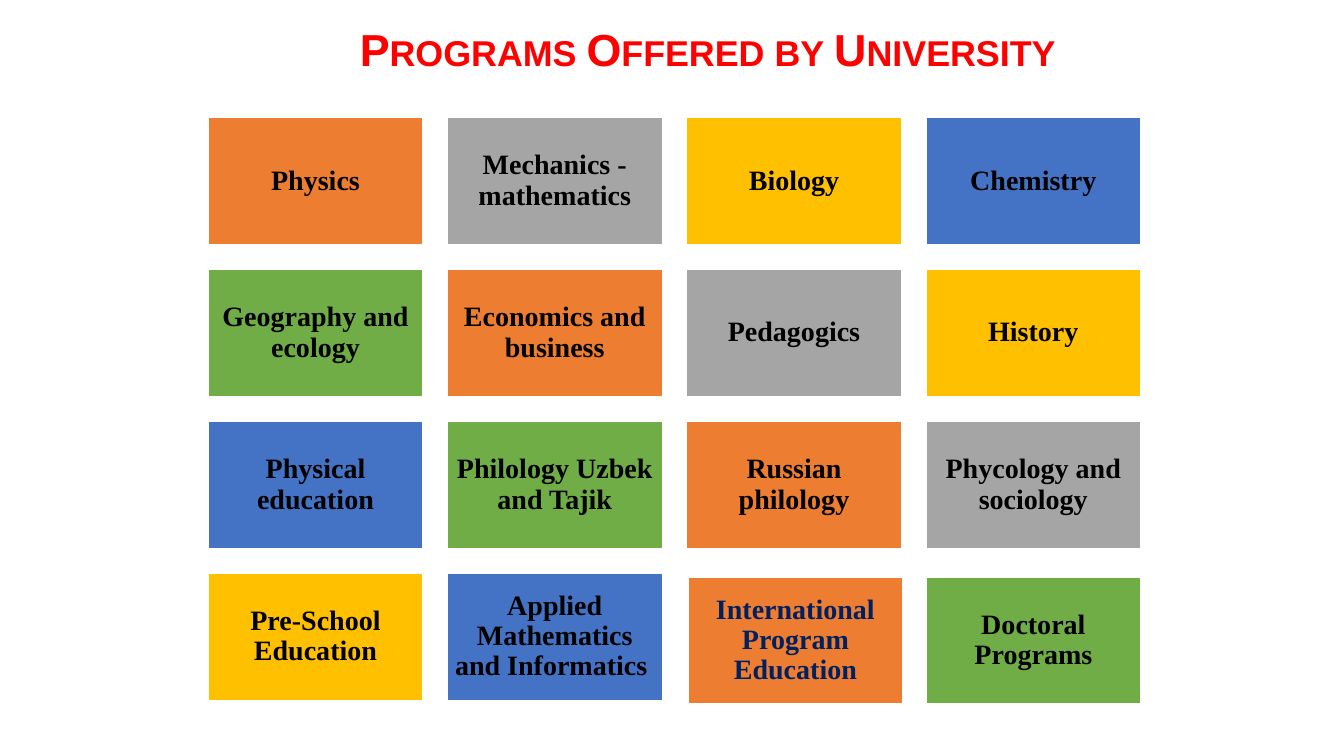
"""Build a slide with a grid of the programs offered by a university."""
from pptx import Presentation
from pptx.dml.color import RGBColor
from pptx.enum.shapes import MSO_SHAPE
from pptx.enum.text import MSO_ANCHOR, PP_ALIGN
from pptx.util import Inches, Pt


def color(hex_value):
    return RGBColor.from_string(hex_value)


def write_text(shape, text, font_name, size, hex_value, alignment, inset):
    frame = shape.text_frame
    frame.text = text
    frame.word_wrap = True
    frame.vertical_anchor = MSO_ANCHOR.MIDDLE
    frame.margin_left = frame.margin_right = Inches(inset)
    frame.margin_top = frame.margin_bottom = Inches(inset)
    paragraph = frame.paragraphs[0]
    paragraph.alignment = alignment
    paragraph.line_spacing = 0.9
    run = paragraph.runs[0]
    run.font.name = font_name
    run.font.size = Pt(size)
    run.font.bold = True
    run.font.color.rgb = color(hex_value)
    return run


presentation = Presentation()
presentation.slide_width = Inches(13.33)
presentation.slide_height = Inches(7.5)
slide = presentation.slides.add_slide(presentation.slide_layouts[6])

title = slide.shapes.add_textbox(Inches(2.52), Inches(0.18), Inches(8), Inches(0.68))
title_run = write_text(title, "Programs Offered by University", "Arial", 32,
                       "FF0000", PP_ALIGN.RIGHT, 0.05)
title_run.font._element.set("cap", "small")

FILLS = ["ED7D31", "A5A5A5", "FFC000", "4472C4", "70AD47"]
PROGRAMS = [
    "Physics", "Mechanics - mathematics", "Biology", "Chemistry",
    "Geography and ecology", "Economics and business", "Pedagogics", "History",
    "Physical education", "Philology Uzbek and Tajik", "Russian philology",
    "Phycology and sociology",
    "Pre-School Education", "Applied Mathematics and Informatics ",
]
COLUMNS = 4
LEFT, TOP = 2.05, 1.15
COLUMN_STEP, ROW_STEP = 2.373, 1.507

tiles = []
for index, program in enumerate(PROGRAMS):
    row, column = divmod(index, COLUMNS)
    tiles.append((program, LEFT + column * COLUMN_STEP, TOP + row * ROW_STEP, "000000"))
tiles.append(("Doctoral Programs", 9.17, 5.71, "000000"))
tiles.append(("International Program Education", 6.81, 5.71, "002060"))

for index, (program, left, top, text_color) in enumerate(tiles):
    tile = slide.shapes.add_shape(MSO_SHAPE.RECTANGLE, Inches(left), Inches(top),
                                  Inches(2.16), Inches(1.29))
    tile.shadow.inherit = False
    tile.fill.solid()
    tile.fill.fore_color.rgb = color(FILLS[index % len(FILLS)])
    tile.line.color.rgb = color("FFFFFF")
    tile.line.width = Pt(3)
    write_text(tile, program, "Times New Roman", 20, text_color, PP_ALIGN.CENTER, 0.08)

presentation.save("out.pptx")
